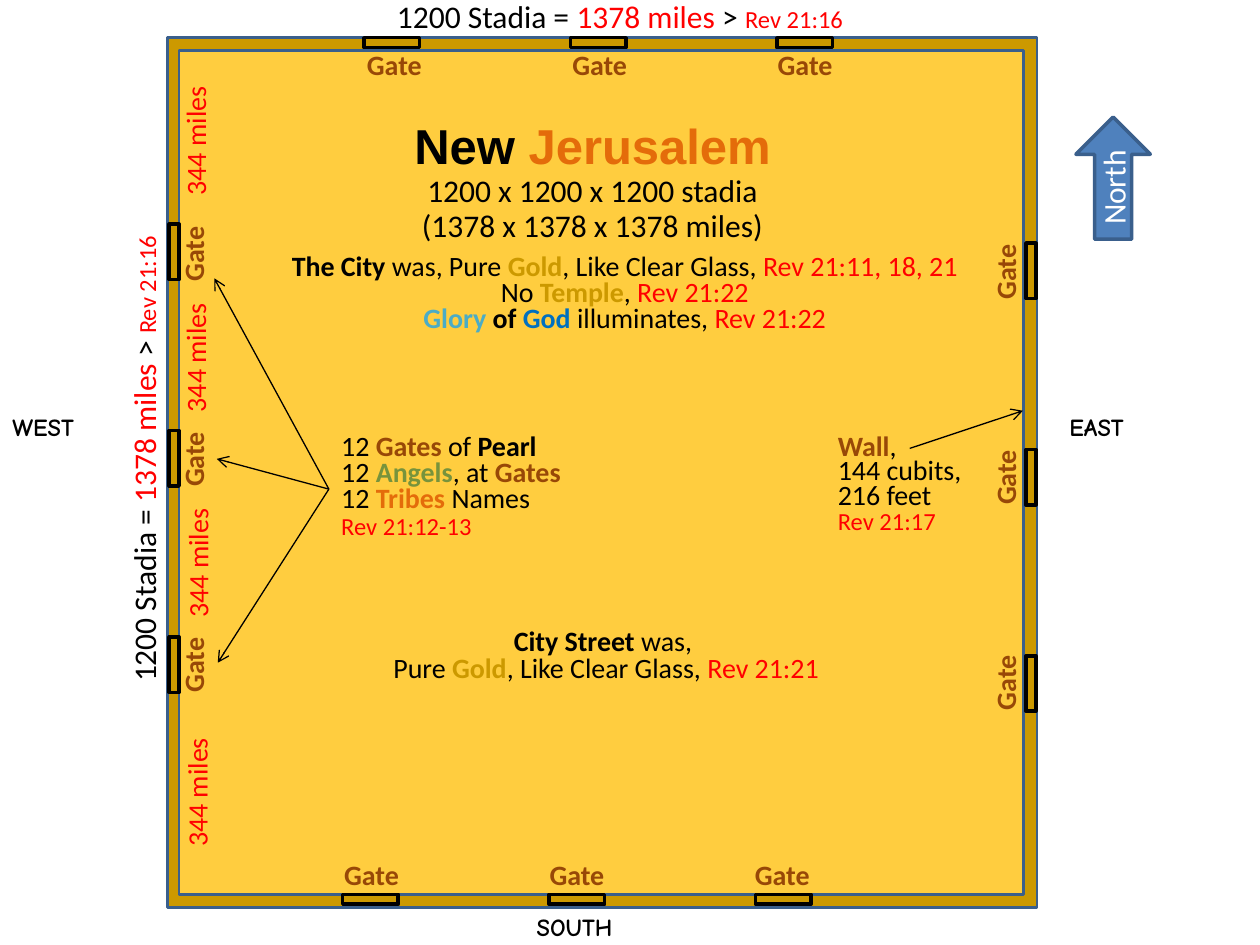
from lxml import etree
from pptx import Presentation, util as u
from pptx.dml.color import RGBColor
from pptx.enum import shapes as sh, text as tx
from pptx.oxml import ns

BLACK = RGBColor(0x00, 0x00, 0x00)
WHITE = RGBColor(0xFF, 0xFF, 0xFF)
RED = RGBColor(0xFF, 0x00, 0x00)
GOLD = RGBColor(0xCC, 0x99, 0x00)
FLOOR = RGBColor(0xFF, 0xCD, 0x3F)
BROWN = RGBColor(0x98, 0x48, 0x07)
ORANGE = RGBColor(0xE4, 0x6C, 0x0A)
GREEN = RGBColor(0x77, 0x93, 0x3C)
AQUA = RGBColor(0x4B, 0xAC, 0xC6)
AZURE = RGBColor(0x00, 0x70, 0xC0)
BLUE = RGBColor(0x4F, 0x81, 0xBD)
EDGE = RGBColor(0x3A, 0x5F, 0x8C)

LEFT, MID = tx.PP_ALIGN.LEFT, tx.PP_ALIGN.CENTER
RECT = sh.MSO_SHAPE.RECTANGLE

deck = Presentation()
deck.slide_width, deck.slide_height = u.Cm(25.4), u.Cm(19.05)
slide = deck.slides.add_slide(deck.slide_layouts[5])
items = slide.shapes


def write(box, paras, align=MID, gap=None, size=16, face="Calibri", wrap=True):
    """Fill a box with paragraphs of (text, colour, bold, size, font) runs."""
    frame = box.text_frame
    frame.word_wrap = wrap
    for i, runs in enumerate(paras):
        para = frame.paragraphs[0] if i == 0 else frame.add_paragraph()
        para.alignment = align
        if gap:
            para.line_spacing = u.Pt(gap)
        for words, *style in runs:
            run = para.add_run()
            run.text = words
            base = [BLACK, False, size, face]
            tint, bold, points, name = style + base[len(style):]
            run.font.color.rgb = tint
            look = {"bold": bold, "size": u.Pt(points), "name": name}
            for key, value in look.items():
                setattr(run.font, key, value)


def block(kind, area, fill, edge, width, turn=0):
    """Add a preset shape, or a text box when kind is None."""
    place = [u.Cm(n) for n in area]
    if kind is None:
        box = items.add_textbox(*place)
        box.text_frame.auto_size = tx.MSO_AUTO_SIZE.SHAPE_TO_FIT_TEXT
    else:
        box = items.add_shape(kind, *place)
        box.shadow.inherit = False
        if fill is None:
            box.fill.background()
        else:
            box.fill.solid()
            box.fill.fore_color.rgb = fill
        box.line.color.rgb = edge
        box.line.width = u.Pt(width)
    box.rotation = turn
    return box


# City wall and floor
block(RECT, (3.38, 0.76, 17.53, 17.53), GOLD, EDGE, 1.5)
block(RECT, (3.61, 1.02, 17.02, 17.02), FLOOR, EDGE, 1.5)

# North arrow
north = block(sh.MSO_SHAPE.RIGHT_ARROW, (21.21, 2.84, 2.46, 1.5),
              BLUE, EDGE, 2, 270)
write(north, [[("North", WHITE)]], size=18)

# Three gates a side: door corner, label corner, direction, turns
sides = [
    ((7.34, 0.76), (7.06, 0.98), (1, 0), 0, 0),
    ((6.91, 18.03), (6.6, 17.32), (1, 0), 0, 0),
    ((2.95, 4.98), (3.09, 4.72), (0, 1), 90, 270),
    ((20.22, 5.36), (19.46, 5.08), (0, 1), 90, 270),
]
for door, label, (dx, dy), spin, turn in sides:
    for i in range(3):
        x, y = door[0] + 4.16 * i * dx, door[1] + 4.16 * i * dy
        block(RECT, (x, y, 1.12, 0.2), None, BLACK, 2, spin)
        x, y = label[0] + 4.14 * i * dx, label[1] + 4.14 * i * dy
        tag = block(None, (x, y, 1.78, 0.81), None, None, 0, turn)
        write(tag, [[("Gate", BROWN, True)]], gap=15)

# Lengths of the walls
span = [[("1200 Stadia = ",), ("1378 miles ", RED), ("> ",),
         ("Rev 21:16", RED, False, 14)]]
for area, turn in [((7.42, -0.18, 10.16, 1.02), 0),
                   ((-2.13, 8.74, 10.06, 1.02), 270)]:
    write(block(None, area, None, None, 0, turn), span, size=18)
for x, y in [(2.41, 2.31), (2.41, 6.68), (2.46, 10.82), (2.44, 15.44)]:
    part = block(None, (x, y, 3.05, 0.94), None, None, 0, 270)
    write(part, [[("344 miles ", RED)]])

# Compass names
for name, x, y, width in [("EAST", 21.31, 8.18, 2.44),
                          ("WEST", 0, 8.18, 2.49),
                          ("SOUTH", 10.57, 18.26, 3.02)]:
    mark = block(None, (x, y, width, 0.86), None, None, 0)
    write(mark, [[(name, BLACK, True)]], LEFT, size=14, face="Comic Neue",
          wrap=False)

# Notes inside the city
notes = [
    ((16.64, 8.69, 3.1, 2.26), LEFT, 14, [
        [("Wall", BROWN, True), (",",)],
        [("144 cubits,",)],
        [("216 feet",)],
        [("Rev 21:17", RED, False, 14)]]),
    ((6.63, 8.66, 5.18, 2.39), LEFT, 15, [
        [("12 ",), ("Gates ", BROWN, True), ("of ",), ("Pearl", BLACK, True)],
        [("12 ",), ("Angels", GREEN, True), (", at ",),
         ("Gates", BROWN, True)],
        [("12 ",), ("Tribes ", ORANGE, True), ("Names",)],
        [("Rev 21:12-13", RED, False, 14)]]),
    ((5.46, 5.03, 14.27, 1.88), MID, 15, [
        [("The City ", BLACK, True), ("was, Pure ",), ("Gold", GOLD, True),
         (", Like Clear Glass, ",), ("Rev 21:11, 18, 21", RED)],
        [("No ",), ("Temple", GOLD, True), (",",), (" Rev 21:22", RED)],
        [("Glory ", AQUA, True), ("of ", BLACK, True), ("God", AZURE, True),
         (" illuminates,",), (" Rev 21:22", RED)]]),
    ((7.14, 12.6, 10.16, 1.35), MID, 15, [
        [("City Street ", BLACK, True), ("was, ",)],
        [("Pure ",), ("Gold", GOLD, True), (", Like Clear Glass, ",),
         ("Rev 21:21", RED)]]),
]
for area, align, gap, paras in notes:
    write(block(None, area, None, None, 0), paras, align, gap)

# Pointers from the notes to the wall and the west gates
hub = (6.63, 9.86)
for start, end in [((18.34, 9.04), (20.62, 8.28)), (hub, (4.32, 5.61)),
                   (hub, (4.39, 13.36)), (hub, (4.37, 9.25))]:
    ray = items.add_connector(sh.MSO_CONNECTOR.STRAIGHT,
                              *[u.Cm(n) for n in start + end])
    ray.line.color.rgb = BLACK
    ray.line.width = u.Pt(0.75)
    props = ray.element.spPr
    tip = etree.SubElement(props.find(ns.qn("a:ln")), ns.qn("a:tailEnd"))
    tip.set("type", "arrow")
    etree.SubElement(props, ns.qn("a:effectLst"))

# Title, brought in front of the floor
title = items.title
area = {"left": 6.88, "top": 2.39, "width": 10.13, "height": 2.74}
for key, value in area.items():
    setattr(title, key, u.Cm(value))
title.text_frame.vertical_anchor = tx.MSO_ANCHOR.TOP
title.text_frame.auto_size = tx.MSO_AUTO_SIZE.SHAPE_TO_FIT_TEXT
write(title, [[("New ", BLACK, True, 28, "Arial"),
               ("Jerusalem", ORANGE, True, 28, "Arial")],
              [("1200 x 1200 x 1200 stadia",)],
              [("(1378 x 1378 x 1378 miles)",)]], gap=20, size=18)
title.text_frame.paragraphs[0].line_spacing = u.Pt(28)
title.element.getparent().append(title.element)

deck.save("out.pptx")
